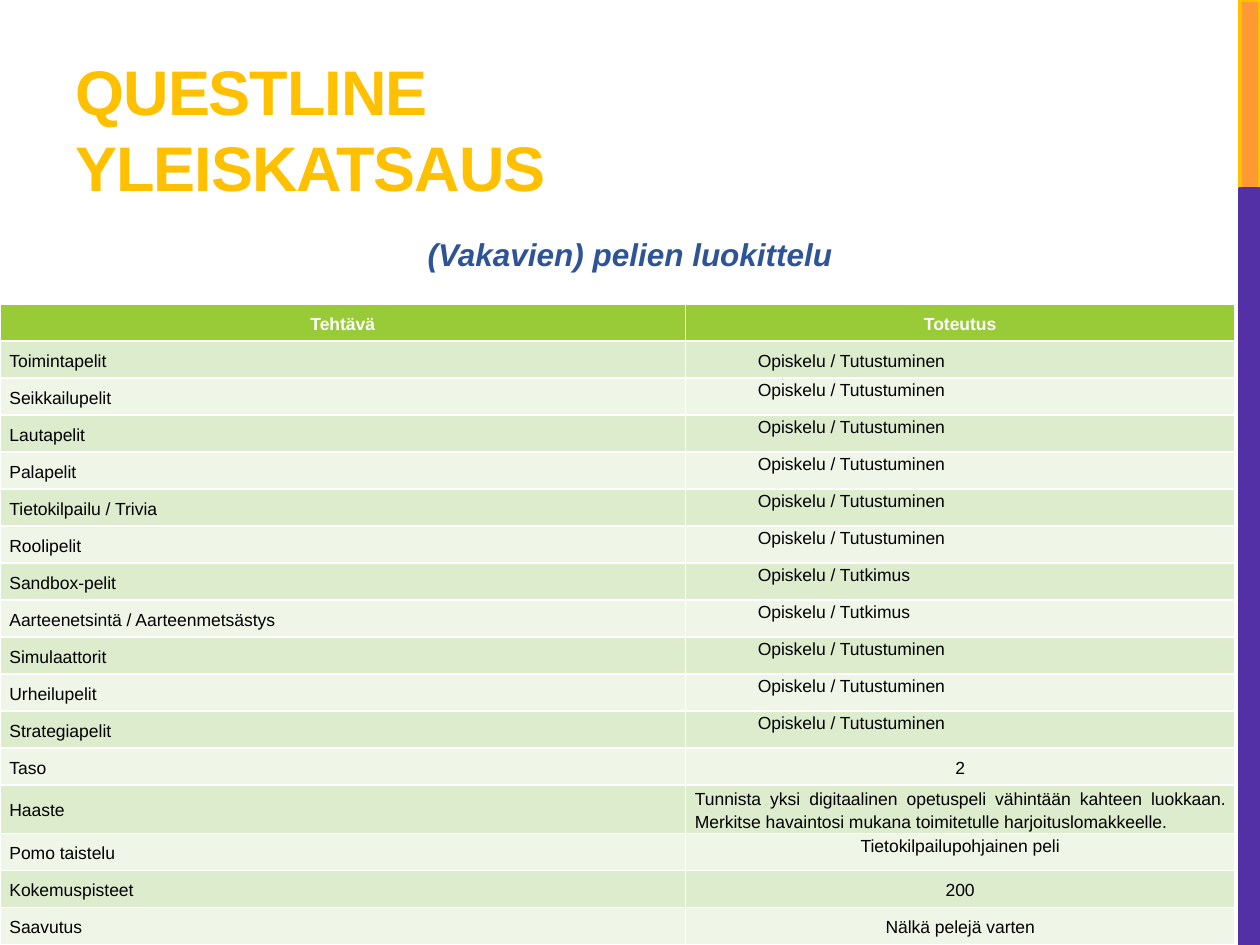
from pptx import Presentation
from pptx.dml.color import RGBColor
from pptx.enum.shapes import MSO_SHAPE
from pptx.enum.text import MSO_ANCHOR, MSO_AUTO_SIZE, PP_ALIGN
from pptx.util import Pt

LEFT, CENTER, JUSTIFY = PP_ALIGN.LEFT, PP_ALIGN.CENTER, PP_ALIGN.JUSTIFY
TOP, MIDDLE, BOTTOM = MSO_ANCHOR.TOP, MSO_ANCHOR.MIDDLE, MSO_ANCHOR.BOTTOM
RECTANGLE = MSO_SHAPE.RECTANGLE
TITLE_ONLY = 5

COLORS = {
    "gold": "FFC000", "orange": "FF9933", "purple": "5330A5",
    "blue": "2F5496", "header": "99CB38", "band_dark": "DEECCE",
    "band_light": "EFF6E8", "white": "FFFFFF", "black": "000000",
}

STUDY, EXPLORE = "Opiskelu / Tutustuminen", "Opiskelu / Tutkimus"
GAMES = [
    ("Toimintapelit", STUDY), ("Seikkailupelit", STUDY),
    ("Lautapelit", STUDY), ("Palapelit", STUDY),
    ("Tietokilpailu / Trivia", STUDY), ("Roolipelit", STUDY),
    ("Sandbox-pelit", EXPLORE),
    ("Aarteenetsintä / Aarteenmetsästys", EXPLORE),
    ("Simulaattorit", STUDY), ("Urheilupelit", STUDY),
    ("Strategiapelit", STUDY),
]
# label, text, alignment and anchor of the right-hand cell
DETAILS = [
    ("Taso", "2", CENTER, MIDDLE),
    ("Haaste", "Tunnista yksi digitaalinen opetuspeli vähintään kahteen "
     "luokkaan. Merkitse havaintosi mukana toimitetulle "
     "harjoituslomakkeelle.", JUSTIFY, MIDDLE),
    ("Pomo taistelu", "Tietokilpailupohjainen peli", CENTER, TOP),
    ("Kokemuspisteet", "200", CENTER, MIDDLE),
    ("Saavutus", "Nälkä pelejä varten", CENTER, MIDDLE),
]
COLUMN_WIDTHS = (391.7, 313.9)
ROW_HEIGHT, CHALLENGE_HEIGHT = 21.15, 26.6


def rgb(name):
    return RGBColor.from_string(COLORS[name])


class SlideBuilder:
    font = "Arial"

    def __init__(self, slide):
        self.slide = slide

    def style(self, p, size, color, align, bold=False, italic=False):
        p.alignment = align
        f = p.font
        f.name, f.size, f.bold, f.italic = self.font, Pt(size), bold, italic
        f.color.rgb = rgb(color)

    def bar(self, x, y, w, h, fill, line):
        sp = self.slide.shapes.add_shape(RECTANGLE, Pt(x), Pt(y), Pt(w), Pt(h))
        sp.shadow.inherit = False
        sp.fill.solid()
        sp.fill.fore_color.rgb = rgb(fill)
        sp.line.color.rgb = rgb(line)
        sp.line.width = Pt(2.25)

    def title(self, text, x, y, w, h):
        sp = self.slide.shapes.title
        sp.left, sp.top, sp.width, sp.height = Pt(x), Pt(y), Pt(w), Pt(h)
        tf = sp.text_frame
        tf.text = text
        tf.vertical_anchor = BOTTOM
        tf.auto_size = MSO_AUTO_SIZE.NONE
        p = tf.paragraphs[0]
        self.style(p, 36, "gold", LEFT, bold=True)
        p.runs[0].font._element.set("spc", "-60")

    def subtitle(self, text, x, y, w, h):
        sp = self.slide.shapes.add_textbox(Pt(x), Pt(y), Pt(w), Pt(h))
        tf = sp.text_frame
        tf.word_wrap = True
        tf.auto_size = MSO_AUTO_SIZE.SHAPE_TO_FIT_TEXT
        p = tf.paragraphs[0]
        p.text = text
        p.line_spacing = 1.5
        p.space_after = Pt(6)
        self.style(p, 18, "blue", CENTER, bold=True, italic=True)

    def table(self, x, y, widths, heights):
        frame = self.slide.shapes.add_table(
            len(heights), len(widths), Pt(x), Pt(y),
            Pt(sum(widths)), Pt(sum(heights)))
        table = frame.table
        for column, width in zip(table.columns, widths):
            column.width = Pt(width)
        for row, height in zip(table.rows, heights):
            row.height = Pt(height)
        return table

    def cell(self, cell, text, fill, align, anchor=MIDDLE, indent=0,
             color="black", bold=False):
        cell.fill.solid()
        cell.fill.fore_color.rgb = rgb(fill)
        cell.margin_left = cell.margin_right = Pt(5.4)
        cell.margin_top = cell.margin_bottom = 0
        cell.vertical_anchor = anchor
        p = cell.text_frame.paragraphs[0]
        p.text = text
        p.line_spacing = 1.15
        p.space_after = Pt(3)
        if indent:
            p._p.get_or_add_pPr().set("marL", str(Pt(indent)))
        self.style(p, 10, color, align, bold)


def main():
    prs = Presentation()
    prs.slide_width, prs.slide_height = Pt(720), Pt(540)
    s = SlideBuilder(prs.slides.add_slide(prs.slide_layouts[TITLE_ONLY]))

    s.bar(708.5, 0, 11.5, 108, "orange", "gold")
    s.bar(708.5, 108, 11.5, 432, "purple", "purple")
    s.title("QUESTLINE YLEISKATSAUS", 36, 12, 456, 108)
    s.subtitle("(Vakavien) pelien luokittelu", 63, 120, 594, 37)

    heights = [ROW_HEIGHT] * (1 + len(GAMES) + len(DETAILS))
    heights[len(GAMES) + 2] = CHALLENGE_HEIGHT
    table = s.table(0, 173.8, COLUMN_WIDTHS, heights)
    for col, text in enumerate(("Tehtävä", "Toteutus")):
        s.cell(table.cell(0, col), text, "header", CENTER,
               color="white", bold=True)

    bands = ("band_light", "band_dark")
    for row, (game, action) in enumerate(GAMES, 1):
        fill = bands[row % 2]
        s.cell(table.cell(row, 0), game, fill, JUSTIFY)
        s.cell(table.cell(row, 1), action, fill, LEFT,
               MIDDLE if row == 1 else TOP, indent=36)
    for row, (label, text, align, anchor) in enumerate(DETAILS, len(GAMES) + 1):
        fill = bands[row % 2]
        s.cell(table.cell(row, 0), label, fill, LEFT)
        s.cell(table.cell(row, 1), text, fill, align, anchor)

    prs.save("out.pptx")


if __name__ == "__main__":
    main()
